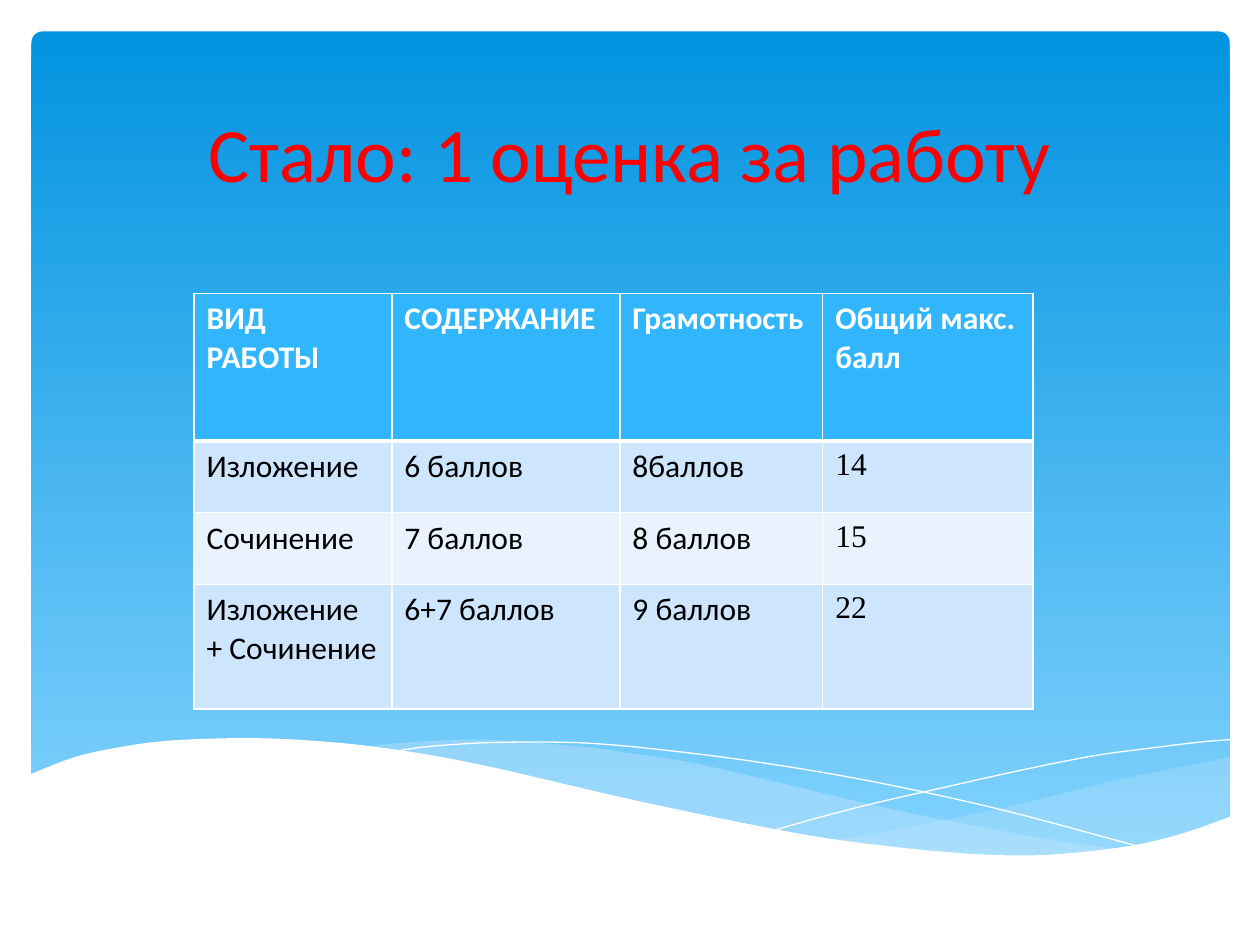
from dataclasses import dataclass

from lxml import etree
from pptx import Presentation
from pptx.dml.color import RGBColor
from pptx.enum.shapes import MSO_SHAPE
from pptx.enum.text import MSO_ANCHOR, PP_ALIGN
from pptx.oxml.ns import qn
from pptx.shapes.autoshape import Shape
from pptx.slide import Slide
from pptx.table import _Cell
from pptx.util import Inches, Pt

ROUNDED_RECTANGLE = MSO_SHAPE.ROUNDED_RECTANGLE
CENTER = PP_ALIGN.CENTER
BOTTOM = MSO_ANCHOR.BOTTOM
TITLE_ONLY_LAYOUT = 5

Point = tuple[float, float]


@dataclass(frozen=True)
class Theme:
    sky_top: str = "0293E0"
    sky_bottom: str = "83D3FE"
    mist: str = "C6E7FC"
    white: str = "FFFFFF"
    black: str = "000000"
    title: str = "FF0000"
    header: str = "31B6FD"
    bands: tuple[str, str] = ("CEE5FE", "E8F3FF")
    font: str = "Calibri"
    score_font: str = "Times New Roman"
    title_size: int = 44
    table_size: int = 18
    border: int = 1
    header_border: int = 3


@dataclass(frozen=True)
class Wave:
    """An area between smooth curves, or an open white line if opacity is 0."""
    curves: tuple[tuple[Point, ...], ...]
    color: str
    opacity: int


THEME = Theme()

WAVES = (
    Wave((
        ((9.76, 6.01), (9.36, 6.09), (8.92, 6.18), (8.62, 6.25), (8.06, 6.39),
         (7.54, 6.5), (7.07, 6.59), (6.62, 6.67)),
        ((6.62, 6.67), (7.06, 6.73), (7.46, 6.77), (7.82, 6.79), (8.15, 6.8),
         (8.55, 6.78), (8.9, 6.74), (9.22, 6.67), (9.51, 6.59), (9.77, 6.49)),
    ), THEME.mist, 29),
    Wave((
        ((8.94, 6.75), (8.38, 6.67), (7.76, 6.56), (7.07, 6.42), (6.3, 6.24),
         (5.84, 6.13), (5.42, 6.04), (5.02, 5.98), (4.65, 5.93), (4.2, 5.89),
         (3.8, 5.87), (3.45, 5.88), (3.14, 5.9), (2.87, 5.93)),
        ((2.87, 5.93), (3.23, 5.98), (3.63, 6.04), (4.05, 6.13), (4.5, 6.24),
         (5.3, 6.42), (6.02, 6.57), (6.66, 6.68), (7.23, 6.76), (7.74, 6.79),
         (8.19, 6.8), (8.59, 6.79), (8.94, 6.75)),
    ), THEME.mist, 40),
    Wave((
        ((3.1, 5.97), (3.36, 5.93), (3.75, 5.9), (4.17, 5.89), (4.69, 5.9),
         (5.33, 5.96), (6.09, 6.06), (6.96, 6.21), (7.96, 6.43), (9.08, 6.73)),
    ), THEME.white, 0),
    Wave((
        ((6.14, 6.59), (6.53, 6.48), (6.96, 6.37), (7.49, 6.25), (8.07, 6.12),
         (8.67, 6), (9.11, 5.94), (9.52, 5.89), (9.76, 5.87)),
    ), THEME.white, 0),
    Wave((
        ((9.77, 6.48), (9.4, 6.61), (8.99, 6.71), (8.5, 6.77), (8.09, 6.79),
         (7.61, 6.77), (7.08, 6.72), (6.48, 6.64), (5.79, 6.51), (5.03, 6.35),
         (4.47, 6.22), (3.91, 6.09), (3.4, 5.99), (2.92, 5.92), (2.5, 5.88),
         (2.11, 5.86), (1.77, 5.86), (1.32, 5.88), (0.95, 5.93), (0.59, 6.01),
         (0.23, 6.15)),
        ((0.23, 7.31), (9.77, 7.31)),
    ), THEME.white, 100),
)

COLUMN_WIDTHS = (1.57, 1.81, 1.61, 1.67)
ROW_HEIGHTS = (1.17, 0.57, 0.57, 0.99)
ROWS = (
    ("ВИД РАБОТЫ", "СОДЕРЖАНИЕ", "Грамотность", "Общий макс. балл"),
    ("Изложение", "6 баллов", "8баллов", "14"),
    ("Сочинение", "7 баллов", "8 баллов", "15"),
    ("Изложение + Сочинение", "6+7 баллов", "9 баллов", "22"),
)


def rgb(color: str) -> RGBColor:
    return RGBColor.from_string(color)


def smooth(knots: tuple[Point, ...], steps: int = 5) -> list[Point]:
    """Run a Catmull-Rom spline through the knots."""
    padded = (knots[0], *knots, knots[-1])
    points = [knots[0]]
    for a, b, c, d in zip(padded, padded[1:], padded[2:], padded[3:]):
        for step in range(1, steps + 1):
            t = step / steps
            points.append(tuple(
                (2 * q + (r - p) * t + (2 * p - 5 * q + 4 * r - s) * t ** 2
                 + (3 * q - p - 3 * r + s) * t ** 3) / 2
                for p, q, r, s in zip(a, b, c, d)))
    return points


def add_sky(slide: Slide) -> None:
    sky = slide.shapes.add_shape(
        ROUNDED_RECTANGLE, Inches(0.25), Inches(0.25), Inches(9.51), Inches(6.6))
    sky.adjustments[0] = 0.013
    sky.shadow.inherit = False
    sky.line.fill.background()
    sky.fill.gradient()
    sky.fill.gradient_angle = 270
    for stop, color in zip(sky.fill.gradient_stops, (THEME.sky_top, THEME.sky_bottom)):
        stop.color.rgb = rgb(color)


def add_wave(slide: Slide, wave: Wave) -> Shape:
    points = [(Inches(x), Inches(y)) for curve in wave.curves for x, y in smooth(curve)]
    builder = slide.shapes.build_freeform(*points[0], scale=1.0)
    builder.add_line_segments(points[1:], close=wave.opacity > 0)
    shape = builder.convert_to_shape()
    shape.shadow.inherit = False
    if wave.opacity == 0:
        shape.fill.background()
        shape.line.color.rgb = rgb(wave.color)
        shape.line.width = Pt(0)
        return shape
    shape.line.fill.background()
    shape.fill.solid()
    shape.fill.fore_color.rgb = rgb(wave.color)
    if wave.opacity < 100:
        color = shape.element.spPr.find(qn("a:solidFill")).find(qn("a:srgbClr"))
        etree.SubElement(color, qn("a:alpha"), val=str(wave.opacity * 1000))
    return shape


def add_title(slide: Slide, text: str) -> None:
    title = slide.shapes.title
    title.element.getparent().append(title.element)  # bring in front of the waves
    title.left, title.top = Inches(0.75), Inches(0.6)
    title.width, title.height = Inches(8.5), Inches(1.02)
    title.text_frame.vertical_anchor = BOTTOM
    paragraph = title.text_frame.paragraphs[0]
    paragraph.alignment = CENTER
    run = paragraph.add_run()
    run.text = text
    run.font.name = THEME.font
    run.font.size = Pt(THEME.title_size)
    run.font.color.rgb = rgb(THEME.title)


def set_borders(cell: _Cell, top: int, bottom: int) -> None:
    properties = cell._tc.get_or_add_tcPr()
    widths = {"L": THEME.border, "R": THEME.border, "T": top, "B": bottom}
    for side, width in widths.items():
        line = etree.SubElement(properties, qn(f"a:ln{side}"), w=str(Pt(width)))
        fill = etree.SubElement(line, qn("a:solidFill"))
        etree.SubElement(fill, qn("a:srgbClr"), val=THEME.white)


def format_cell(cell: _Cell, text: str, row: int, is_score: bool) -> None:
    is_header = row == 0
    set_borders(cell,
                top=THEME.header_border if row == 1 else THEME.border,
                bottom=THEME.header_border if is_header else THEME.border)
    cell.fill.solid()
    cell.fill.fore_color.rgb = rgb(THEME.header if is_header else THEME.bands[(row - 1) % 2])
    run = cell.text_frame.paragraphs[0].add_run()
    run.text = text
    run.font.name = THEME.score_font if is_score else THEME.font
    run.font.size = Pt(THEME.table_size)
    run.font.bold = is_header
    run.font.color.rgb = rgb(THEME.white if is_header else THEME.black)


def add_score_table(slide: Slide) -> None:
    table = slide.shapes.add_table(
        len(ROWS), len(COLUMN_WIDTHS), Inches(1.54), Inches(2.33),
        Inches(sum(COLUMN_WIDTHS)), Inches(sum(ROW_HEIGHTS))).table
    for column, width in zip(table.columns, COLUMN_WIDTHS):
        column.width = Inches(width)
    for row, (texts, height) in enumerate(zip(ROWS, ROW_HEIGHTS)):
        table.rows[row].height = Inches(height)
        for column, text in enumerate(texts):
            is_score = row > 0 and column == len(texts) - 1
            format_cell(table.cell(row, column), text, row, is_score)


def main() -> None:
    presentation = Presentation()
    presentation.slide_width, presentation.slide_height = Inches(10), Inches(7.5)
    slide = presentation.slides.add_slide(presentation.slide_layouts[TITLE_ONLY_LAYOUT])
    add_sky(slide)
    for wave in WAVES:
        add_wave(slide, wave)
    add_title(slide, "Стало: 1 оценка за работу")
    add_score_table(slide)
    presentation.save("out.pptx")


if __name__ == "__main__":
    main()
